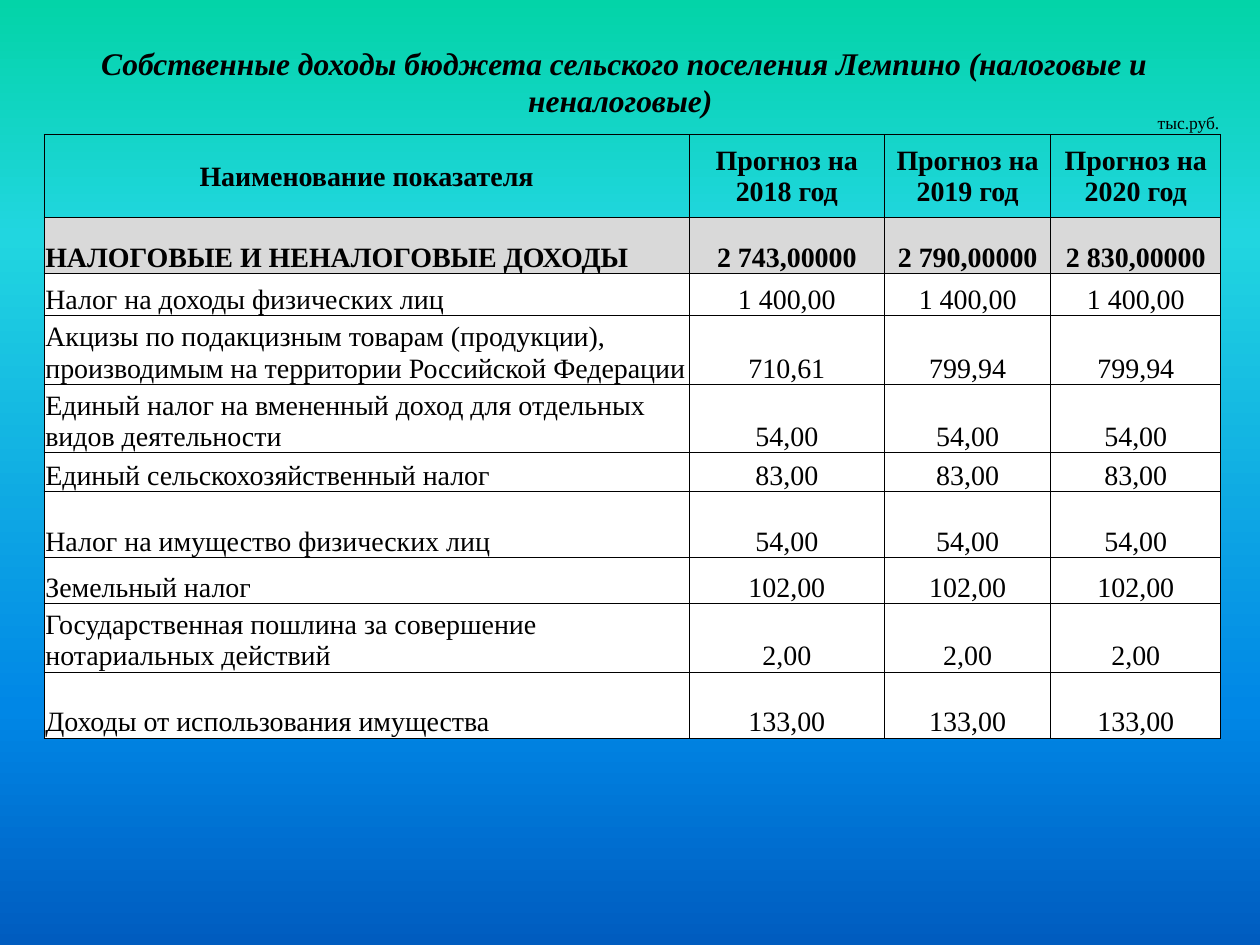
"""Build the slide with the settlement's own budget revenues for three years."""
from copy import deepcopy
from dataclasses import dataclass

from lxml.etree import SubElement
from pptx import Presentation
from pptx.dml.color import RGBColor
from pptx.enum.text import MSO_ANCHOR, MSO_AUTO_SIZE, PP_ALIGN
from pptx.oxml.ns import qn
from pptx.util import Inches, Pt

SLIDE_WIDTH, SLIDE_HEIGHT = Inches(10), Inches(7.5)
FONT = "Times New Roman"
COLORS = {"text": "000000", "border": "000000", "total": "D9D9D9", "item": "FFFFFF"}
BACKGROUND_STOPS = {0: "03D4A8", 0.25: "21D6E0", 0.75: "0087E6", 1: "005CBF"}
COLUMN_SHARES = (51.2, 15.5, 13.2, 13.5)
YEARS = (2018, 2019, 2020)


@dataclass(frozen=True)
class Box:
    """Position and size in percent of the slide."""
    left: float
    top: float
    width: float
    height: float

    def lengths(self) -> tuple:
        return (across(self.left), down(self.top), across(self.width), down(self.height))


@dataclass(frozen=True)
class Row:
    """A table row: height in percent of the slide, label, values and look."""
    height: float
    label: str
    values: tuple
    fill: str = "item"
    bold: bool = False


TITLE_BOX = Box(3.5, 3.87, 92.1, 9.47)
UNIT_BOX = Box(90.9, 11.2, 7, 3.6)

ROWS = (
    Row(8.78, "Наименование показателя",
        tuple(f"Прогноз на {year} год" for year in YEARS), "", True),
    Row(5.93, "НАЛОГОВЫЕ И НЕНАЛОГОВЫЕ ДОХОДЫ",
        ("2 743,00000", "2 790,00000", "2 830,00000"), "total", True),
    Row(4.44, "Налог на доходы физических лиц", ("1 400,00",) * 3),
    Row(7.2, "Акцизы по подакцизным товарам (продукции), производимым на территории "
        "Российской Федерации", ("710,61", "799,94", "799,94")),
    Row(7.2, "Единый налог на вмененный доход для отдельных видов деятельности",
        ("54,00",) * 3),
    Row(4.13, "Единый сельскохозяйственный налог", ("83,00",) * 3),
    Row(6.98, "Налог на имущество физических лиц", ("54,00",) * 3),
    Row(4.87, "Земельный налог", ("102,00",) * 3),
    Row(7.2, "Государственная пошлина за совершение нотариальных действий", ("2,00",) * 3),
    Row(6.98, "Доходы от использования имущества", ("133,00",) * 3),
)
TABLE_BOX = Box(3.5, 14.27, sum(COLUMN_SHARES), sum(row.height for row in ROWS))


def across(percent: float) -> int:
    """Turn a percentage of the slide's width into a length."""
    return round(SLIDE_WIDTH * percent / 100)


def down(percent: float) -> int:
    """Turn a percentage of the slide's height into a length."""
    return round(SLIDE_HEIGHT * percent / 100)


def write(frame, text: str, size: float, bold: bool = False, italic: bool = False,
          alignment=PP_ALIGN.LEFT) -> None:
    """Put one formatted paragraph into a text frame."""
    paragraph = frame.paragraphs[0]
    paragraph.text = text
    paragraph.alignment = alignment
    font = paragraph.font
    font.name, font.size, font.bold, font.italic = FONT, Pt(size), bold, italic
    font.color.rgb = RGBColor.from_string(COLORS["text"])


def paint_background(slide) -> None:
    """Fill the slide with a vertical gradient of several stops."""
    fill = slide.background.fill
    fill.gradient()
    fill.gradient_angle = 270
    stop_list = slide.element.find(".//" + qn("a:gsLst"))
    for _ in range(len(BACKGROUND_STOPS) - len(stop_list)):
        stop_list.append(deepcopy(stop_list[-1]))
    for stop, (position, color) in zip(fill.gradient_stops, BACKGROUND_STOPS.items()):
        stop.position = position
        stop.color.rgb = RGBColor.from_string(color)


def add_title(slide) -> None:
    """Move and format the title placeholder."""
    title = slide.shapes.title
    title.left, title.top, title.width, title.height = TITLE_BOX.lengths()
    title.text_frame.auto_size = MSO_AUTO_SIZE.NONE
    title.text_frame.vertical_anchor = MSO_ANCHOR.MIDDLE
    write(title.text_frame,
          "Собственные доходы бюджета сельского поселения Лемпино (налоговые и неналоговые) ",
          18, bold=True, italic=True, alignment=PP_ALIGN.CENTER)


def add_unit(slide) -> None:
    """Add the unit of measure above the table."""
    frame = slide.shapes.add_textbox(*UNIT_BOX.lengths()).text_frame
    frame.word_wrap = False
    write(frame, "тыс.руб.", 10)


def outline(cell) -> None:
    """Draw thin borders on all four sides of a cell."""
    properties = cell._tc.get_or_add_tcPr()
    for side in ("a:lnL", "a:lnR", "a:lnT", "a:lnB"):
        line = SubElement(properties, qn(side), w=str(Pt(0.5)))
        solid = SubElement(line, qn("a:solidFill"))
        SubElement(solid, qn("a:srgbClr"), val=COLORS["border"])


def format_cell(cell, row: Row, text: str, centred: bool) -> None:
    """Write, outline and fill one table cell."""
    cell.margin_left = cell.margin_right = cell.margin_top = Inches(0.01)
    cell.margin_bottom = 0
    cell.vertical_anchor = MSO_ANCHOR.BOTTOM if row.fill else MSO_ANCHOR.MIDDLE
    write(cell.text_frame, text, 16, row.bold,
          alignment=PP_ALIGN.CENTER if centred else PP_ALIGN.LEFT)
    outline(cell)
    if row.fill:
        cell.fill.solid()
        cell.fill.fore_color.rgb = RGBColor.from_string(COLORS[row.fill])
    else:
        cell.fill.background()


def add_revenue_table(slide) -> None:
    """Add the table of revenues by year."""
    table = slide.shapes.add_table(len(ROWS), len(COLUMN_SHARES), *TABLE_BOX.lengths()).table
    table.first_row = table.horz_banding = False
    for column, share in zip(table.columns, COLUMN_SHARES):
        column.width = across(share)
    for row_index, row in enumerate(ROWS):
        table.rows[row_index].height = down(row.height)
        for column_index, text in enumerate((row.label, *row.values)):
            centred = column_index > 0 or not row.fill
            format_cell(table.cell(row_index, column_index), row, text, centred)


def main() -> None:
    """Build and save the presentation."""
    presentation = Presentation()
    presentation.slide_width, presentation.slide_height = SLIDE_WIDTH, SLIDE_HEIGHT
    slide = presentation.slides.add_slide(presentation.slide_layouts[5])
    paint_background(slide)
    add_title(slide)
    add_unit(slide)
    add_revenue_table(slide)
    presentation.save("out.pptx")


if __name__ == "__main__":
    main()
